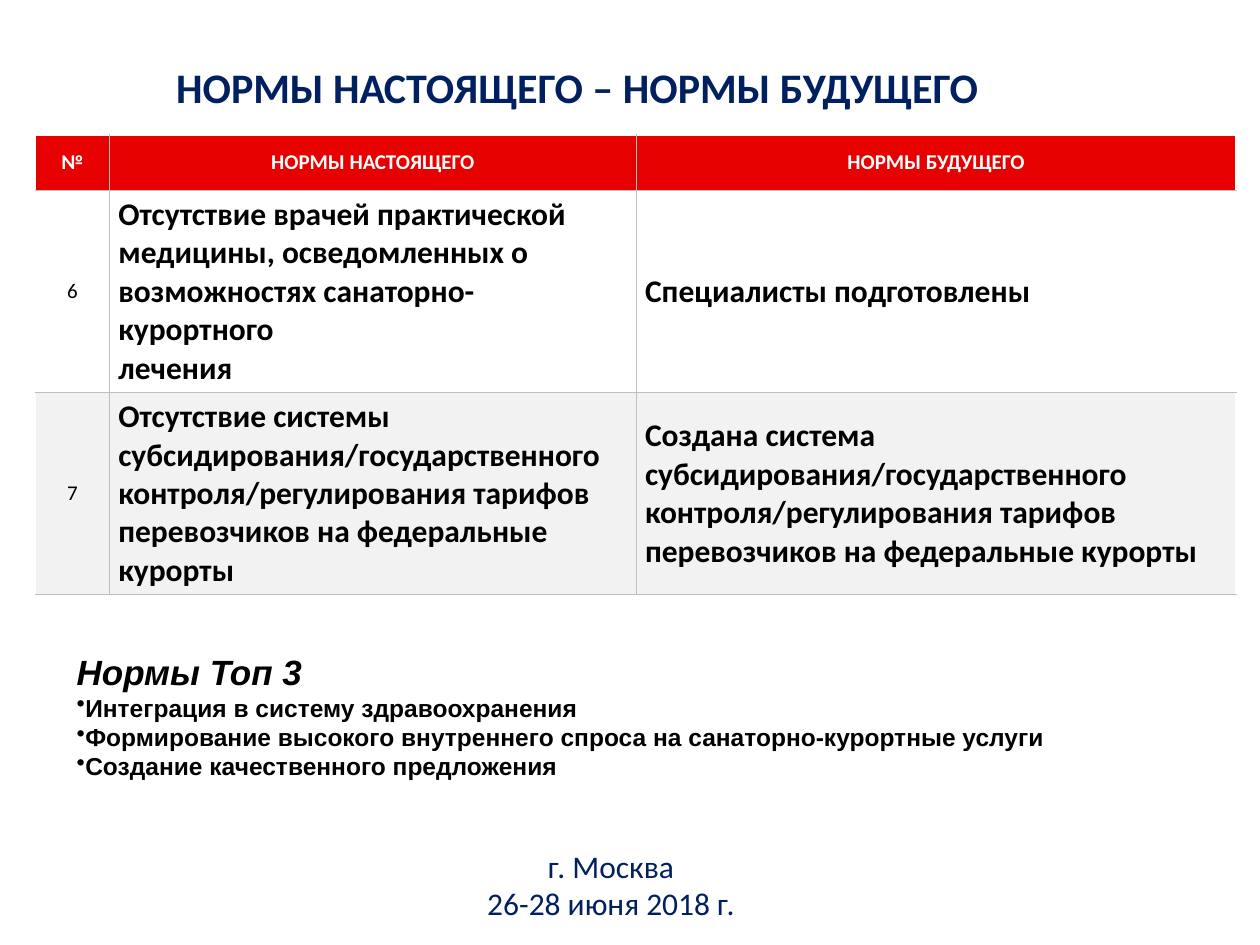
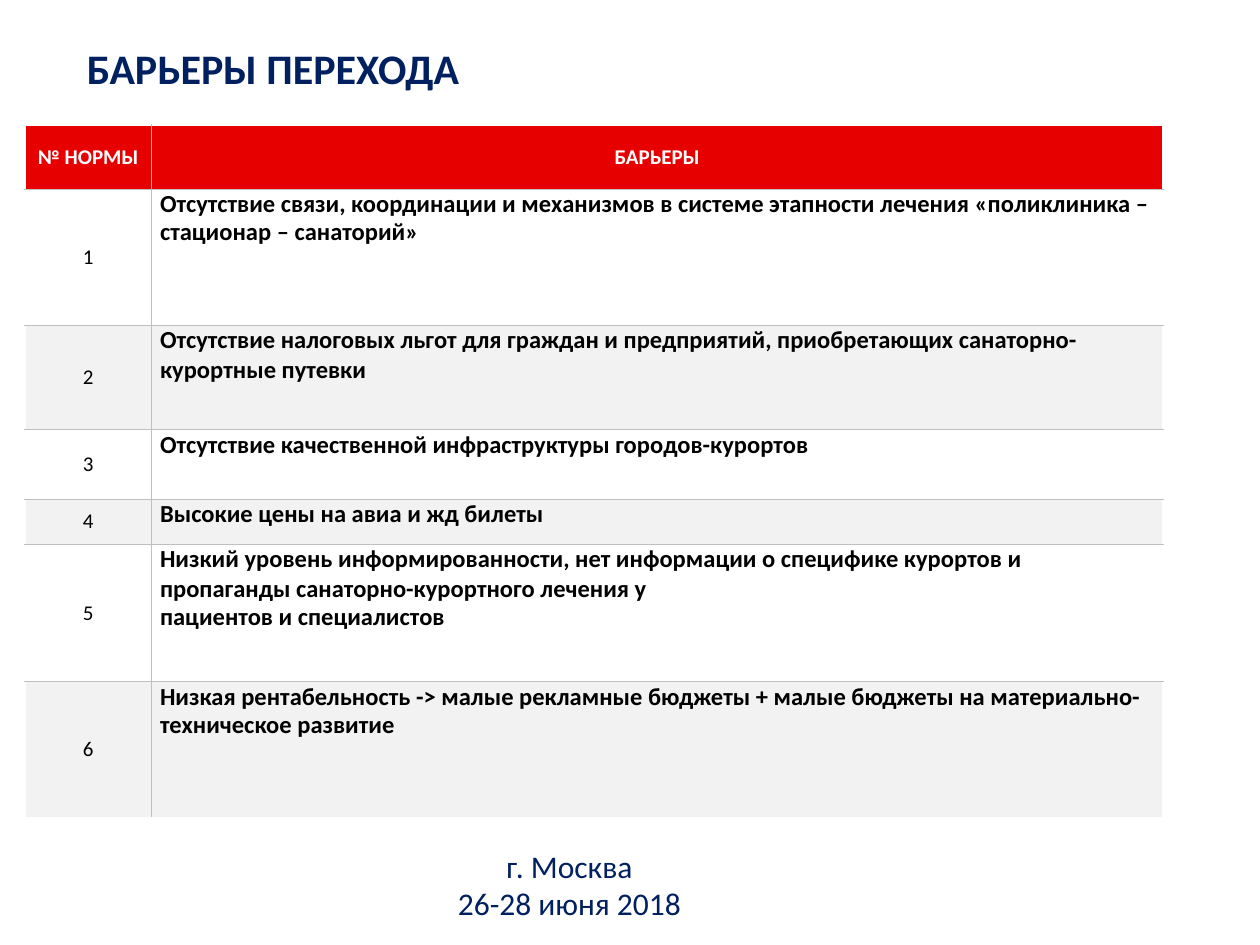
"""Build two slides: norms of the present and future, and the barriers between them."""
from lxml import etree
from pptx import Presentation
from pptx import util as u
from pptx.dml.color import RGBColor
from pptx.enum import text
from pptx.oxml.ns import qn

NAVY, RED, GREY, BAND, WHITE, BLACK = "002060", "E60000", "BFBFBF", "F2F2F2", "FFFFFF", "000000"
SUBSIDY = ("субсидирования/государственного контроля/регулирования тарифов "
           "перевозчиков на федеральные курорты")

NORMS = {
    "title": "НОРМЫ НАСТОЯЩЕГО – НОРМЫ БУДУЩЕГО",
    "title_at": (1.3, 0.44, 6.63, 0.5),
    "table_at": (0.28, 1.07),
    "columns": (0.59, 4.18, 4.76),
    "heights": (0.44, 1.6, 1.6),
    "header": ("№", "НОРМЫ НАСТОЯЩЕГО", "НОРМЫ БУДУЩЕГО"),
    "rows": [
        ("6", ["Отсутствие врачей практической медицины, осведомленных о "
               "возможностях санаторно-курортного", "лечения"],
         ["Специалисты подготовлены"]),
        ("7", ["Отсутствие системы", SUBSIDY], ["Создана система", SUBSIDY]),
    ],
    "size": 18, "compact": False, "closed": True,
    "footer_left": 2.8, "date": "26-28 июня 2018 г.",
}
BARRIERS = {
    "title": "БАРЬЕРЫ ПЕРЕХОДА",
    "title_at": (0.59, 0.29, 3.19, 0.5),
    "table_at": (0.2, 0.99),
    "columns": (1, 8.03),
    "heights": (0.51, 1.08, 0.83, 0.55, 0.36, 1.09, 1.08),
    "header": ("№ НОРМЫ", "БАРЬЕРЫ"),
    "rows": [
        ("1", ["Отсутствие связи, координации и механизмов в системе этапности лечения "
               "«поликлиника –", "стационар – санаторий»"]),
        ("2", ["Отсутствие налоговых льгот для граждан и предприятий, приобретающих "
               "санаторно-курортные путевки"]),
        ("3", ["Отсутствие качественной инфраструктуры городов-курортов"]),
        ("4", ["Высокие цены на авиа и жд билеты"]),
        ("5", ["Низкий уровень информированности, нет информации о специфике курортов и",
               "пропаганды санаторно-курортного лечения у", "пациентов и специалистов"]),
        ("6", ["Низкая рентабельность -> малые рекламные бюджеты + малые бюджеты на "
               "материально-", "техническое развитие"]),
    ],
    "size": 14, "compact": True, "closed": False,
    "footer_left": 2.47, "date": "26-28 июня 2018",
}
CITY = "г. Москва"
TOP_TITLE = "Нормы Топ 3"
TOP_NORMS = [
    "Интеграция в систему здравоохранения",
    "Формирование высокого внутреннего спроса на санаторно-курортные услуги",
    "Создание качественного предложения",
]


def color(value):
    return RGBColor.from_string(value)


def add_para(frame, words, size, ink, font="Calibri", bold=False, italic=False, center=False):
    para = frame.paragraphs[0]
    if para.runs:
        para = frame.add_paragraph()
    para.alignment = text.PP_ALIGN.CENTER if center else text.PP_ALIGN.LEFT
    span = para.add_run()
    span.text = words
    span.font.name, span.font.size = font, u.Pt(size)
    span.font.bold, span.font.italic = bold, italic
    span.font.color.rgb = color(ink)
    return para


def add_box(page, place, wrap=True):
    frame = page.shapes.add_textbox(*map(u.Inches, place)).text_frame
    frame.word_wrap = wrap
    frame.auto_size = text.MSO_AUTO_SIZE.SHAPE_TO_FIT_TEXT
    return frame


def add_borders(cell, sides):
    props = cell._tc.get_or_add_tcPr()
    for position, side in enumerate(side for side in ("L", "R", "T", "B") if side in sides):
        line = etree.Element(qn(f"a:ln{side}"), w=str(u.Pt(0.5)))
        fill = etree.SubElement(line, qn("a:solidFill"))
        etree.SubElement(fill, qn("a:srgbClr"), val=GREY)
        props.insert(position, line)


def fill_barrier(cell, lines):
    cell.margin_left = cell.margin_right = cell.margin_top = cell.margin_bottom = 0
    cell.vertical_anchor = text.MSO_ANCHOR.TOP
    for number, para in enumerate(cell.text_frame.paragraphs, 1):
        para._p.get_or_add_pPr().set("marL", str(u.Inches(0.07)))
        para.line_spacing = u.Pt(16.1 if number == len(lines) > 1 else 17.1)


def add_grid(page, plan):
    columns, heights = plan["columns"], plan["heights"]
    place = (*plan["table_at"], sum(columns), sum(heights))
    table = page.shapes.add_table(len(heights), len(columns), *map(u.Inches, place)).table
    table.first_row = table.horz_banding = False
    for column, width in zip(table.columns, columns):
        column.width = u.Inches(width)
    for r, entries in enumerate([plan["header"], *plan["rows"]]):
        table.rows[r].height = u.Inches(heights[r])
        for c, entry in enumerate(entries):
            cell = table.cell(r, c)
            cell.fill.solid()
            cell.fill.fore_color.rgb = color(RED if r == 0 else WHITE if r % 2 else BAND)
            cell.margin_left = cell.margin_right = u.Inches(0.07)
            cell.margin_top = cell.margin_bottom = u.Inches(0.04)
            cell.vertical_anchor = text.MSO_ANCHOR.MIDDLE
            if isinstance(entry, str):
                add_para(cell.text_frame, entry, 12, BLACK if r else WHITE,
                         bold=r == 0, center=True)
            else:
                for line in entry:
                    add_para(cell.text_frame, line, plan["size"], BLACK, bold=True)
                if plan["compact"]:
                    fill_barrier(cell, entry)
            inner = {"L": c > 0, "R": c < len(columns) - 1, "T": r > 0,
                     "B": r < len(heights) - 1 or plan["closed"]}
            add_borders(cell, [side for side, drawn in inner.items() if drawn])


def add_page(deck, plan):
    page = deck.slides.add_slide(deck.slide_layouts[6])
    add_grid(page, plan)
    add_para(add_box(page, plan["title_at"], wrap=False), plan["title"], 24, NAVY, bold=True)
    footer = add_box(page, (plan["footer_left"], 6.67, 5, 0.71))
    city = add_para(footer, CITY, 18, NAVY, center=True)
    city._p.get_or_add_pPr().set("marR", str(u.Inches(0.9)))
    add_para(footer, plan["date"], 18, NAVY, center=True)
    return page


def add_top_norms(page):
    frame = add_box(page, (0.51, 5.11, 8.66, 1.14))
    frame.vertical_anchor = text.MSO_ANCHOR.MIDDLE
    add_para(frame, TOP_TITLE, 20, BLACK, "Arial", bold=True, italic=True)
    for norm in TOP_NORMS:
        para = add_para(frame, norm, 14, BLACK, "Arial", bold=True)
        etree.SubElement(para._p.get_or_add_pPr(), qn("a:buChar"), char="•")


def main():
    deck = Presentation()
    deck.slide_width, deck.slide_height = u.Inches(10), u.Inches(7.5)
    add_top_norms(add_page(deck, NORMS))
    add_page(deck, BARRIERS)
    deck.save("out.pptx")


if __name__ == "__main__":
    main()
